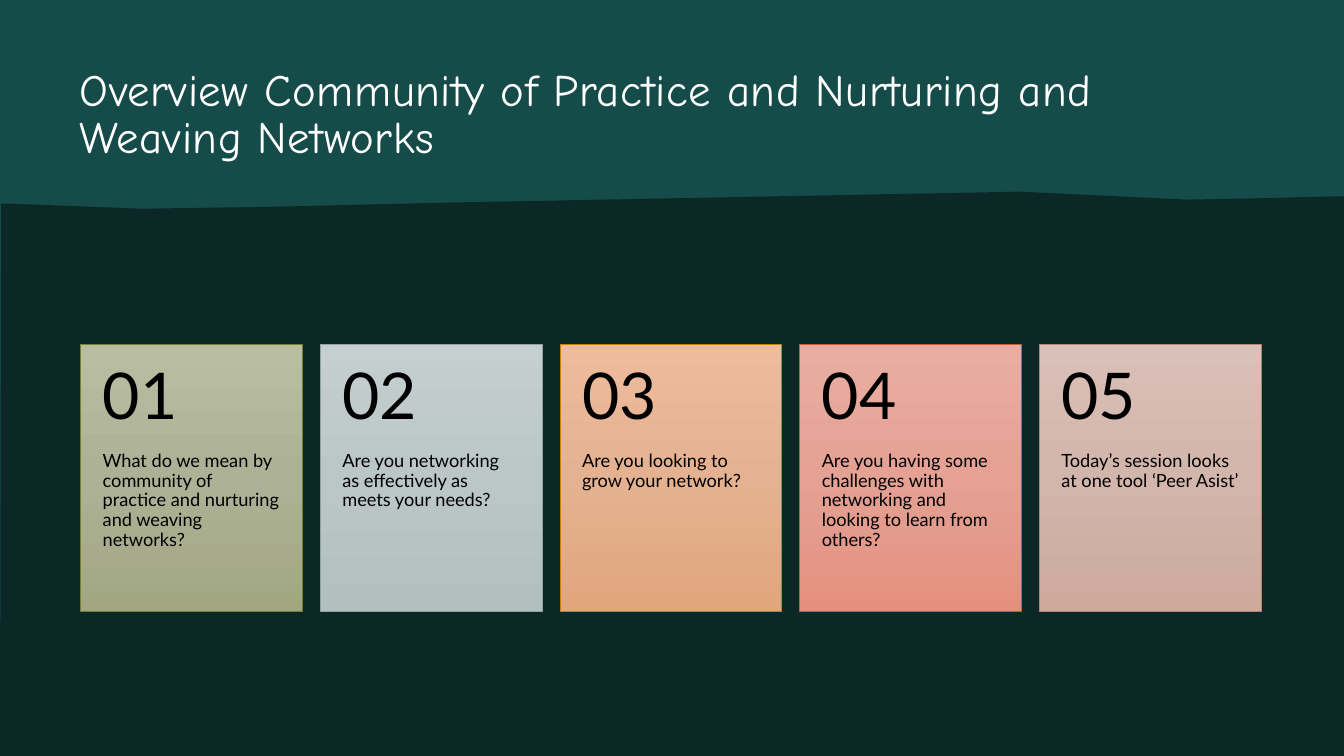
from copy import deepcopy
from dataclasses import dataclass

from pptx import Presentation
from pptx.dml.color import RGBColor
from pptx.enum import shapes, text
from pptx.oxml.ns import qn
from pptx.util import Cm, Pt


@dataclass(frozen=True)
class Theme:
    dark: str = "0B2827"
    teal: str = "154C4A"
    white: str = "FFFFFF"
    black: str = "000000"
    title_font: str = "Comic Neue"
    body_font: str = "Lato"
    title_size: int = 32
    number_size: int = 46
    body_size: int = 13
    # Border, then gradient from top to bottom
    cards: tuple = (
        ("767E37", "B9BDA2", "ADB196", "A2A782"),
        ("8FA3A3", "C6CFCF", "BBC6C6", "B1BFBF"),
        ("CE7F01", "EDBC9D", "E4B290", "E1A67C"),
        ("D15A29", "E9AEA1", "E4A194", "E5907F"),
        ("B88470", "D9C0B8", "D2B5AB", "CEAA9D"),
    )


THEME = Theme()
WIDTH, HEIGHT = 33.87, 19.05
CARD_LEFT, CARD_TOP, CARD_PITCH = 2.03, 8.69, 6.04
CARD_WIDTH, CARD_HEIGHT, NUMBER_HEIGHT = 5.59, 6.71, 2.69

TITLE = "Overview Community of Practice and Nurturing and Weaving Networks"
QUESTIONS = (
    "What do we mean by community of practice and nurturing and weaving networks?",
    "Are you networking as effectively as meets your needs?",
    "Are you looking to grow your network?",
    "Are you having some challenges with networking and looking to learn from others?",
    "Today’s session looks at one tool ‘Peer Asist’",
)
WAVE = (
    (25.7, 4.83), (29.9, 5.03), (31.57, 5), (33.6, 4.95), (WIDTH, 4.95),
    (WIDTH, HEIGHT), (0, HEIGHT), (0.03, 5.13), (0.2, 5.13), (3.56, 5.26),
    (6.91, 5.21), (11.07, 5.11),
)


def rgb(value):
    return RGBColor.from_string(value)


def paint(sp, color):
    sp.shadow.inherit = False
    sp.fill.solid()
    sp.fill.fore_color.rgb = rgb(color)
    sp.line.fill.background()


def write(sp, content, font, size, color, margins, spacing,
          anchor=text.MSO_ANCHOR.TOP):
    """Fill a shape with one left-aligned paragraph; margins are l, t, r, b in cm."""
    tf = sp.text_frame
    tf.text = content
    tf.word_wrap = True
    tf.auto_size = text.MSO_AUTO_SIZE.NONE
    tf.vertical_anchor = anchor
    tf.margin_left, tf.margin_top, tf.margin_right, tf.margin_bottom = map(Cm, margins)
    p = tf.paragraphs[0]
    p.alignment = text.PP_ALIGN.LEFT
    p.line_spacing = spacing
    r = p.runs[0]
    r.font.name = font
    r.font.size = Pt(size)
    r.font.color.rgb = rgb(color)
    return r


def add_title(slide):
    title = slide.shapes.title
    title.left, title.top, title.width, title.height = map(Cm, (2.01, 1.73, 29.79, 1.9))
    r = write(title, TITLE, THEME.title_font, THEME.title_size, THEME.white,
              (0, 0, 0, 0), 0.88)
    r.font._element.set("spc", "40")


def add_backdrop(slide):
    """Teal sheet behind the title, with the dark wave over its lower part."""
    sheet = slide.shapes.add_shape(shapes.MSO_SHAPE.RECTANGLE, 0, 0, Cm(WIDTH), Cm(HEIGHT))
    paint(sheet, THEME.teal)
    points = [(Cm(x), Cm(y)) for x, y in WAVE]
    builder = slide.shapes.build_freeform(*points[0])
    builder.add_line_segments(points[1:], close=True)
    wave = builder.convert_to_shape()
    paint(wave, THEME.dark)
    for sp in (sheet, wave):
        slide.shapes.title.element.addprevious(sp.element)


def fill_gradient(sp, colors):
    """Blend three colours evenly from top to bottom."""
    sp.fill.gradient()
    sp.fill.gradient_angle = 270
    first = next(sp.element.iter(qn("a:gs")))
    first.addnext(deepcopy(first))
    for i, (stop, color) in enumerate(zip(sp.fill.gradient_stops, colors)):
        stop.position = i / 2
        stop.color.rgb = rgb(color)


def add_card(slide, index, question, colors):
    left = Cm(CARD_LEFT + index * CARD_PITCH)
    top, width = Cm(CARD_TOP), Cm(CARD_WIDTH)
    number_height = Cm(NUMBER_HEIGHT)
    border, *gradient = colors

    card = slide.shapes.add_shape(shapes.MSO_SHAPE.RECTANGLE, left, top, width,
                                  Cm(CARD_HEIGHT))
    card.shadow.inherit = False
    fill_gradient(card, gradient)
    card.line.color.rgb = rgb(border)
    card.line.width = Pt(0.5)

    body = slide.shapes.add_textbox(left, top + number_height, width,
                                    Cm(CARD_HEIGHT - NUMBER_HEIGHT))
    write(body, question, THEME.body_font, THEME.body_size, THEME.black,
          (0.56, 0, 0.56, 0.91), 0.9)
    number = slide.shapes.add_textbox(left, top, width, number_height)
    write(number, f"{index + 1:02}", THEME.body_font, THEME.number_size, THEME.black,
          (0.56, 0.46, 0.56, 0.46), 0.9, text.MSO_ANCHOR.MIDDLE)


def main():
    prs = Presentation()
    prs.slide_width, prs.slide_height = Cm(WIDTH), Cm(HEIGHT)
    slide = prs.slides.add_slide(prs.slide_layouts.get_by_name("Title Only"))
    slide.background.fill.solid()
    slide.background.fill.fore_color.rgb = rgb(THEME.dark)
    add_backdrop(slide)
    add_title(slide)
    for i, (question, colors) in enumerate(zip(QUESTIONS, THEME.cards)):
        add_card(slide, i, question, colors)
    prs.save("out.pptx")


if __name__ == "__main__":
    main()
